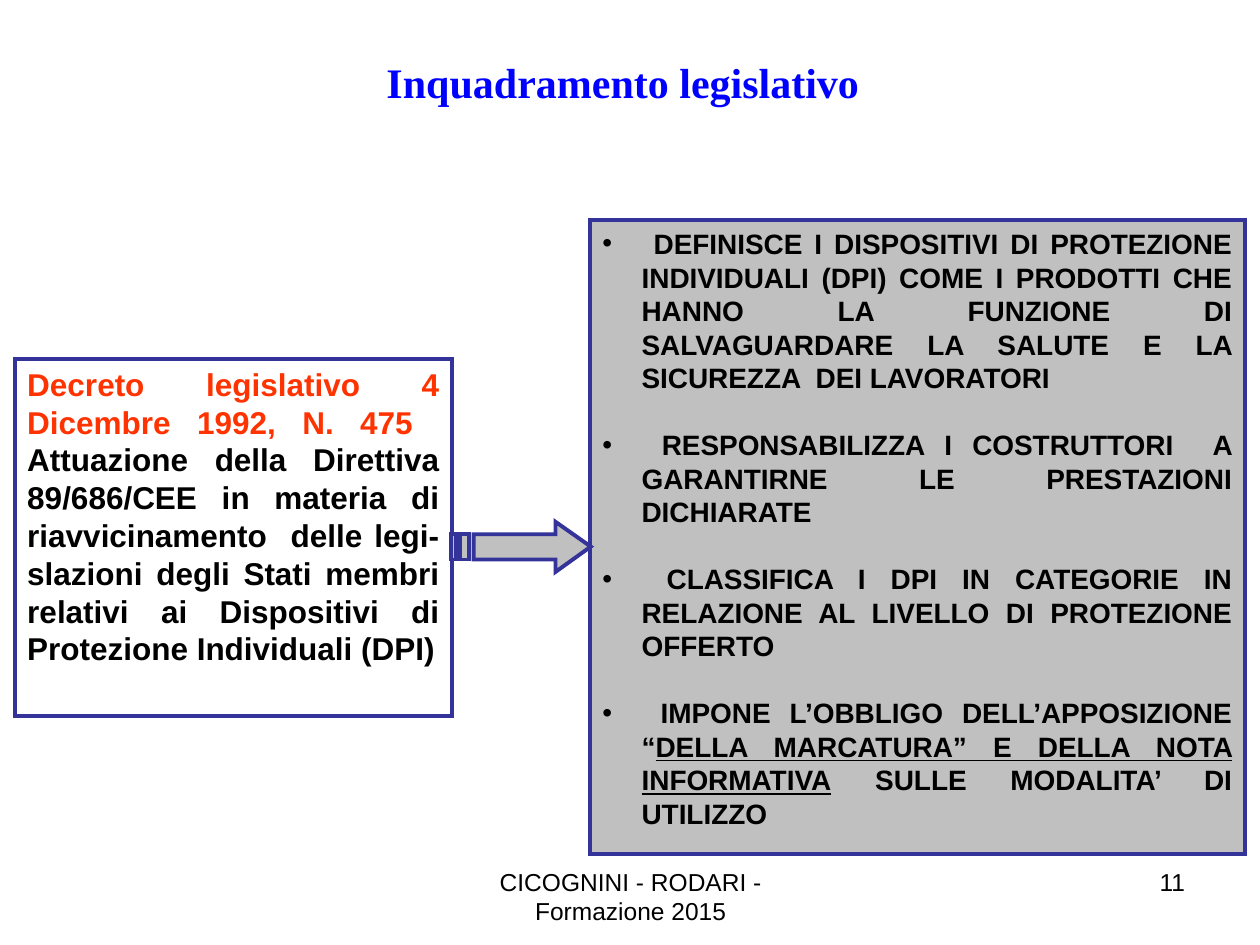
from dataclasses import dataclass

from lxml.etree import SubElement
from pptx import Presentation
from pptx.dml.color import RGBColor
from pptx.enum.shapes import MSO_SHAPE
from pptx.enum.text import MSO_ANCHOR, MSO_AUTO_SIZE, PP_ALIGN
from pptx.oxml.ns import qn
from pptx.util import Cm, Pt


@dataclass(frozen=True)
class Theme:
    sans: str = "Arial"
    serif: str = "Times New Roman"
    text: str = "000000"
    title: str = "0000FF"
    decree: str = "FF3300"
    panel: str = "C0C0C0"
    border: str = "333399"
    border_width: float = 2.25
    title_size: int = 24
    decree_size: int = 18
    list_size: int = 16
    footer_size: int = 14
    list_gap: int = 19


@dataclass(frozen=True)
class Area:
    left: float
    top: float
    width: float
    height: float


@dataclass(frozen=True)
class Span:
    text: str
    underline: bool = False


@dataclass(frozen=True)
class FooterItem:
    text: str
    area: Area
    align: PP_ALIGN


THEME = Theme()
TITLE_AREA = Area(3.96, 1.02, 17.4, 1.27)
DUTIES_AREA = Area(11.89, 4.44, 13.21, 12.78)
DECREE_AREA = Area(0.3, 7.23, 8.81, 7.21)

DUTIES = [
    [Span(" DEFINISCE I DISPOSITIVI DI PROTEZIONE INDIVIDUALI (DPI) COME I PRODOTTI CHE "
          "HANNO LA FUNZIONE DI SALVAGUARDARE LA SALUTE E LA SICUREZZA  DEI LAVORATORI")],
    [Span(" RESPONSABILIZZA I COSTRUTTORI  A GARANTIRNE LE PRESTAZIONI DICHIARATE")],
    [Span(" CLASSIFICA I DPI IN CATEGORIE IN RELAZIONE AL LIVELLO DI PROTEZIONE OFFERTO")],
    [Span(" IMPONE L’OBBLIGO DELL’APPOSIZIONE “"),
     Span("DELLA MARCATURA” E DELLA NOTA INFORMATIVA", underline=True),
     Span(" SULLE MODALITA’ DI UTILIZZO")],
]

FOOTER = [
    FooterItem("CICOGNINI - RODARI - Formazione 2015",
               Area(8.69, 17.35, 8.05, 1.32), PP_ALIGN.CENTER),
    FooterItem("11", Area(18.21, 17.35, 5.93, 1.32), PP_ALIGN.RIGHT),
]


def bounds(area: Area) -> tuple:
    return Cm(area.left), Cm(area.top), Cm(area.width), Cm(area.height)


def place(shape, area: Area) -> None:
    shape.left, shape.top, shape.width, shape.height = bounds(area)


def prepare_frame(shape):
    frame = shape.text_frame
    frame.word_wrap = True
    frame.auto_size = MSO_AUTO_SIZE.NONE
    frame.vertical_anchor = MSO_ANCHOR.TOP
    return frame


def add_text(para, text: str, *, size: int, color: str = THEME.text,
             font: str = THEME.sans, bold: bool = False, underline: bool = False) -> None:
    span = para.add_run()
    span.text = text
    span.font.name = font
    span.font.size = Pt(size)
    span.font.bold = bold
    span.font.underline = underline
    span.font.color.rgb = RGBColor.from_string(color)


def style_shape(shape, filled: bool) -> None:
    if filled:
        shape.fill.solid()
        shape.fill.fore_color.rgb = RGBColor.from_string(THEME.panel)
    else:
        shape.fill.background()
    shape.line.color.rgb = RGBColor.from_string(THEME.border)
    shape.line.width = Pt(THEME.border_width)
    outline = shape._element.spPr.find(qn("a:ln"))
    SubElement(outline, qn("a:miter"), lim="800000")


def set_bullet(para, indent: float) -> None:
    properties = para._p.get_or_add_pPr()
    properties.set("marL", str(Cm(indent)))
    properties.set("indent", str(-Cm(indent)))
    SubElement(properties, qn("a:buChar"), char="•")


def fill_title(title) -> None:
    place(title, TITLE_AREA)
    para = prepare_frame(title).paragraphs[0]
    para.alignment = PP_ALIGN.CENTER
    add_text(para, "Inquadramento legislativo ", size=THEME.title_size,
             color=THEME.title, font=THEME.serif, bold=True)


def fill_duties(body) -> None:
    place(body, DUTIES_AREA)
    style_shape(body, filled=True)
    frame = prepare_frame(body)
    for index, spans in enumerate(DUTIES):
        para = frame.add_paragraph() if index else frame.paragraphs[0]
        para.alignment = PP_ALIGN.JUSTIFY
        para.space_before = Pt(THEME.list_gap if index else 0)
        set_bullet(para, 0.79)
        for span in spans:
            add_text(para, span.text, size=THEME.list_size, bold=True,
                     underline=span.underline)


def add_decree(page) -> None:
    box = page.shapes.add_shape(MSO_SHAPE.RECTANGLE, *bounds(DECREE_AREA))
    box.shadow.inherit = False
    style_shape(box, filled=False)
    para = prepare_frame(box).paragraphs[0]
    para.alignment = PP_ALIGN.JUSTIFY
    add_text(para, "Decreto legislativo 4 Dicembre 1992, N. 475 ",
             size=THEME.decree_size, color=THEME.decree, bold=True)
    para.add_line_break()
    add_text(para, "Attuazione della Direttiva 89/686/CEE in materia di riavvicinamento  "
             "delle legi-slazioni degli Stati membri relativi ai Dispositivi di "
             "Protezione Individuali (DPI)", size=THEME.decree_size, bold=True)


def add_striped_arrow(page) -> None:
    top, shaft_top, middle, shaft_bottom, bottom = map(Cm, (10.52, 10.77, 11.02, 11.28, 11.53))
    tail, neck, tip = map(Cm, (9.55, 11.2, 11.91))
    head = [(neck, top), (neck, shaft_top), (tail, shaft_top), (tail, shaft_bottom),
            (neck, shaft_bottom), (neck, bottom), (tip, middle)]
    stripes = [[(Cm(left), shaft_top), (Cm(left), shaft_bottom),
                (Cm(right), shaft_bottom), (Cm(right), shaft_top)]
               for left, right in ((9.27, 9.45), (9.09, 9.19))]
    builder = page.shapes.build_freeform(*head[0])
    builder.add_line_segments(head[1:], close=True)
    for stripe in stripes:
        builder.move_to(*stripe[0])
        builder.add_line_segments(stripe[1:], close=True)
    arrow = builder.convert_to_shape()
    arrow.shadow.inherit = False
    style_shape(arrow, filled=True)


def add_footer_item(page, item: FooterItem) -> None:
    box = page.shapes.add_textbox(*bounds(item.area))
    para = prepare_frame(box).paragraphs[0]
    para.alignment = item.align
    add_text(para, item.text, size=THEME.footer_size)


def main() -> None:
    deck = Presentation()
    deck.slide_width, deck.slide_height = Cm(25.4), Cm(19.05)
    page = deck.slides.add_slide(deck.slide_layouts[1])
    fill_title(page.shapes.title)
    fill_duties(page.placeholders[1])
    add_decree(page)
    add_striped_arrow(page)
    for item in FOOTER:
        add_footer_item(page, item)
    deck.save("out.pptx")


if __name__ == "__main__":
    main()
